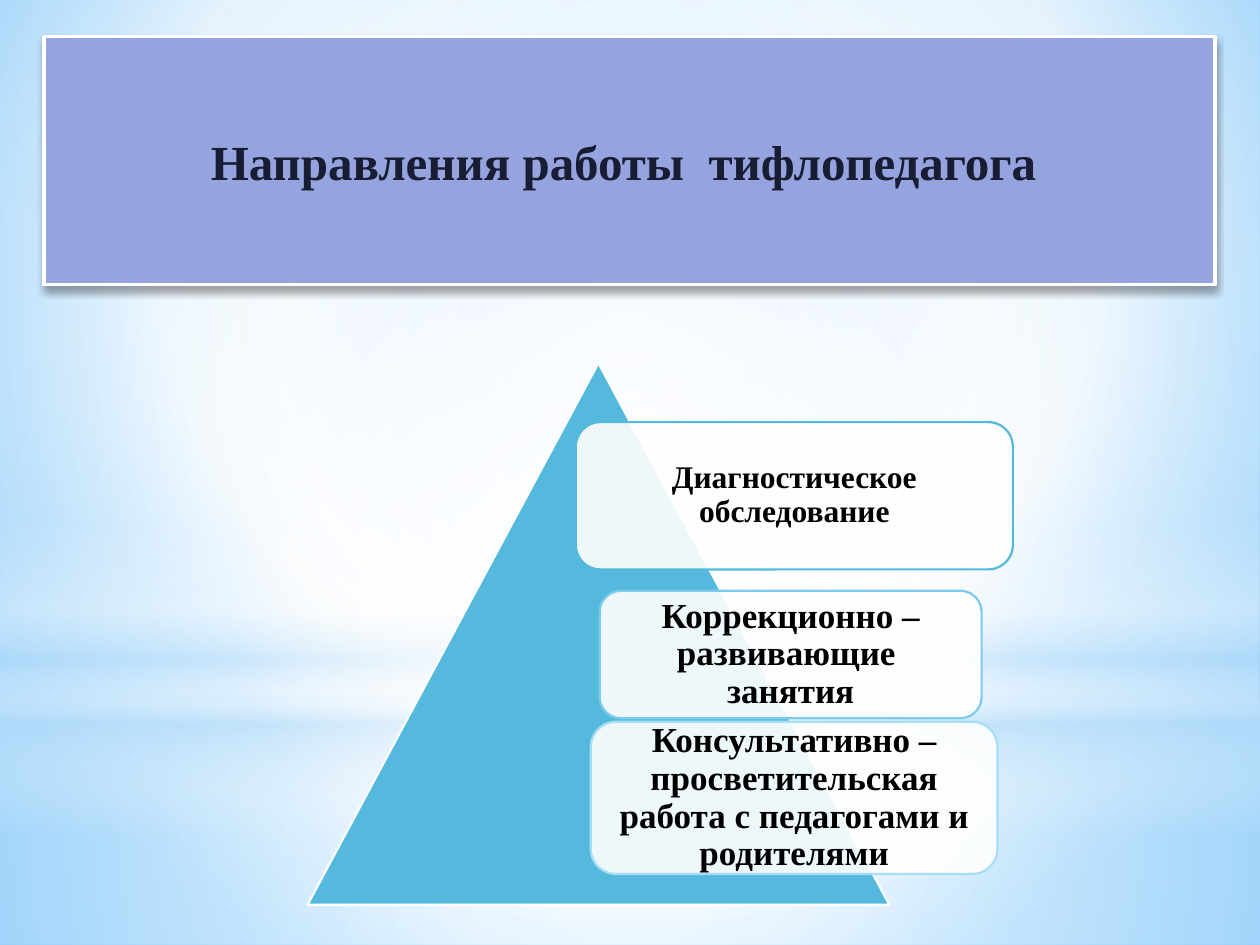
from lxml import etree
from pptx import Presentation
from pptx.dml.color import RGBColor
from pptx.enum.shapes import MSO_SHAPE
from pptx.enum.text import MSO_ANCHOR, PP_ALIGN
from pptx.oxml import parse_xml
from pptx.oxml.ns import nsdecls, qn
from pptx.util import Cm, Pt

RECTANGLE, ELLIPSE = MSO_SHAPE.RECTANGLE, MSO_SHAPE.OVAL
TRIANGLE, ROUNDED = MSO_SHAPE.ISOSCELES_TRIANGLE, MSO_SHAPE.ROUNDED_RECTANGLE
MIDDLE, CENTER = MSO_ANCHOR.MIDDLE, PP_ALIGN.CENTER

TITLE_ONLY = 5
FONT = "Times New Roman"
WHITE = "FFFFFF"
PALE = "B4DCFA"
BLUE = "55B9DD"
MIDPOINT = (50, 50, 50, 50)

# Stops are (position %, colour, opacity %).
BACKGROUND_STOPS = [(0, "9ED5FF", 100), (60, WHITE, 100), (100, "5BB9FF", 100)]
LAYERS = [
    (RECTANGLE, (0, 14.17, 25.4, 4.88), MIDPOINT,
     [(0, WHITE, 91), (37, WHITE, 76), (100, PALE, 79)]),
    (RECTANGLE, (0, 0, 25.4, 14.17), MIDPOINT,
     [(0, WHITE, 89), (48, WHITE, 62), (100, PALE, 79)]),
    (RECTANGLE, (0, 10.46, 25.4, 6.35), None,
     [(0, WHITE, 0), (29, WHITE, 30), (45, PALE, 40),
      (55, WHITE, 26), (65, PALE, 60), (100, WHITE, 0)]),
    (ELLIPSE, (0, 4.45, 25.4, 14.17), MIDPOINT,
     [(0, WHITE, 100), (56, WHITE, 0)]),
]
CARDS = [
    ((11.61, 8.51, 8.81, 2.97), BLUE, 18, "Диагностическое обследование"),
    ((12.09, 11.91, 7.7, 2.57), "7CCBEC", 20,
     "Коррекционно – развивающие  занятия"),
    ((11.91, 14.55, 8.2, 3.07), "A6DDF7", 20,
     "Консультативно – просветительская работа с педагогами и родителями"),
]


def color(hex_text):
    return RGBColor.from_string(hex_text)


def set_attributes(target, values):
    for name, value in values.items():
        setattr(target, name, value)


def set_gradient(fill, owner, stops, focus):
    """Give the owner element a circular gradient, or a vertical one without focus."""
    fill.solid()
    stop_xml = "".join(
        f'<a:gs pos="{position * 1000}"><a:srgbClr val="{hex_text}">'
        f'<a:alpha val="{opacity * 1000}"/></a:srgbClr></a:gs>'
        for position, hex_text, opacity in stops)
    if focus:
        sides = " ".join(f'{side}="{value * 1000}"' for side, value in zip("ltrb", focus))
        direction = f'<a:path path="circle"><a:fillToRect {sides}/></a:path>'
    else:
        direction = '<a:lin ang="5400000" scaled="0"/>'
    gradient = parse_xml(f'<a:gradFill {nsdecls("a")} rotWithShape="1">'
                         f'<a:gsLst>{stop_xml}</a:gsLst>{direction}</a:gradFill>')
    solid = owner.find(".//" + qn("a:solidFill"))
    solid.getparent().replace(solid, gradient)


def paint(shape, fill_color, line_color, line_width):
    shape.fill.solid()
    shape.fill.fore_color.rgb = color(fill_color)
    shape.line.color.rgb = color(line_color)
    shape.line.width = Pt(line_width)


def write(shape, text, size, text_color, inset):
    frame = shape.text_frame
    set_attributes(frame, {
        "text": text, "word_wrap": True, "vertical_anchor": MIDDLE,
        "margin_left": Cm(inset), "margin_right": Cm(inset),
        "margin_top": Cm(inset), "margin_bottom": Cm(inset)})
    paragraph = frame.paragraphs[0]
    paragraph.alignment = CENTER
    font = paragraph.runs[0].font
    set_attributes(font, {"name": FONT, "size": Pt(size), "bold": True})
    font.color.rgb = color(text_color)
    return paragraph


def add_plain_shape(shapes, kind, box):
    shape = shapes.add_shape(kind, *map(Cm, box))
    shape.shadow.inherit = False
    return shape


def add_layers(slide):
    set_gradient(slide.background.fill, slide.element.find(".//" + qn("p:bgPr")),
                 BACKGROUND_STOPS, (20, 10, 20, 60))
    for kind, box, focus, stops in LAYERS:
        layer = add_plain_shape(slide.shapes, kind, box)
        layer.line.fill.background()
        set_gradient(layer.fill, layer.element.spPr, stops, focus)


def format_title(slide):
    title = slide.shapes.title
    set_attributes(title, {"left": Cm(0.89), "top": Cm(0.74),
                           "width": Cm(23.6), "height": Cm(5)})
    paint(title, "95A4DE", WHITE, 2)
    write(title, "Направления работы  тифлопедагога ", 28, "191D34", 0.25)
    title.element.spPr.append(parse_xml(
        f'<a:effectLst {nsdecls("a")}><a:outerShdw blurRad="50800" dist="38100" '
        'dir="5400000" rotWithShape="0"><a:srgbClr val="000000">'
        '<a:alpha val="35000"/></a:srgbClr></a:outerShdw></a:effectLst>'))
    slide.shapes._spTree.append(title.element)  # in front of the layers


def add_card(shapes, box, line_color, size, text):
    card = add_plain_shape(shapes, ROUNDED, box)
    paint(card, WHITE, line_color, 1.25)
    white = card.element.spPr.find(qn("a:solidFill"))[0]
    etree.SubElement(white, qn("a:alpha"), val="90000")
    paragraph = write(card, text, size, "000000", 0.2)
    paragraph.line_spacing = 0.9


def add_pyramid(slide):
    shapes = slide.shapes.add_group_shape().shapes
    triangle = add_plain_shape(shapes, TRIANGLE, (6.2, 7.32, 11.73, 10.92))
    paint(triangle, BLUE, WHITE, 1.25)
    for card in CARDS:
        add_card(shapes, *card)


def main():
    presentation = Presentation()
    set_attributes(presentation, {"slide_width": Cm(25.4), "slide_height": Cm(19.05)})
    slide = presentation.slides.add_slide(presentation.slide_layouts[TITLE_ONLY])
    add_layers(slide)
    format_title(slide)
    add_pyramid(slide)
    presentation.save("out.pptx")


if __name__ == "__main__":
    main()
